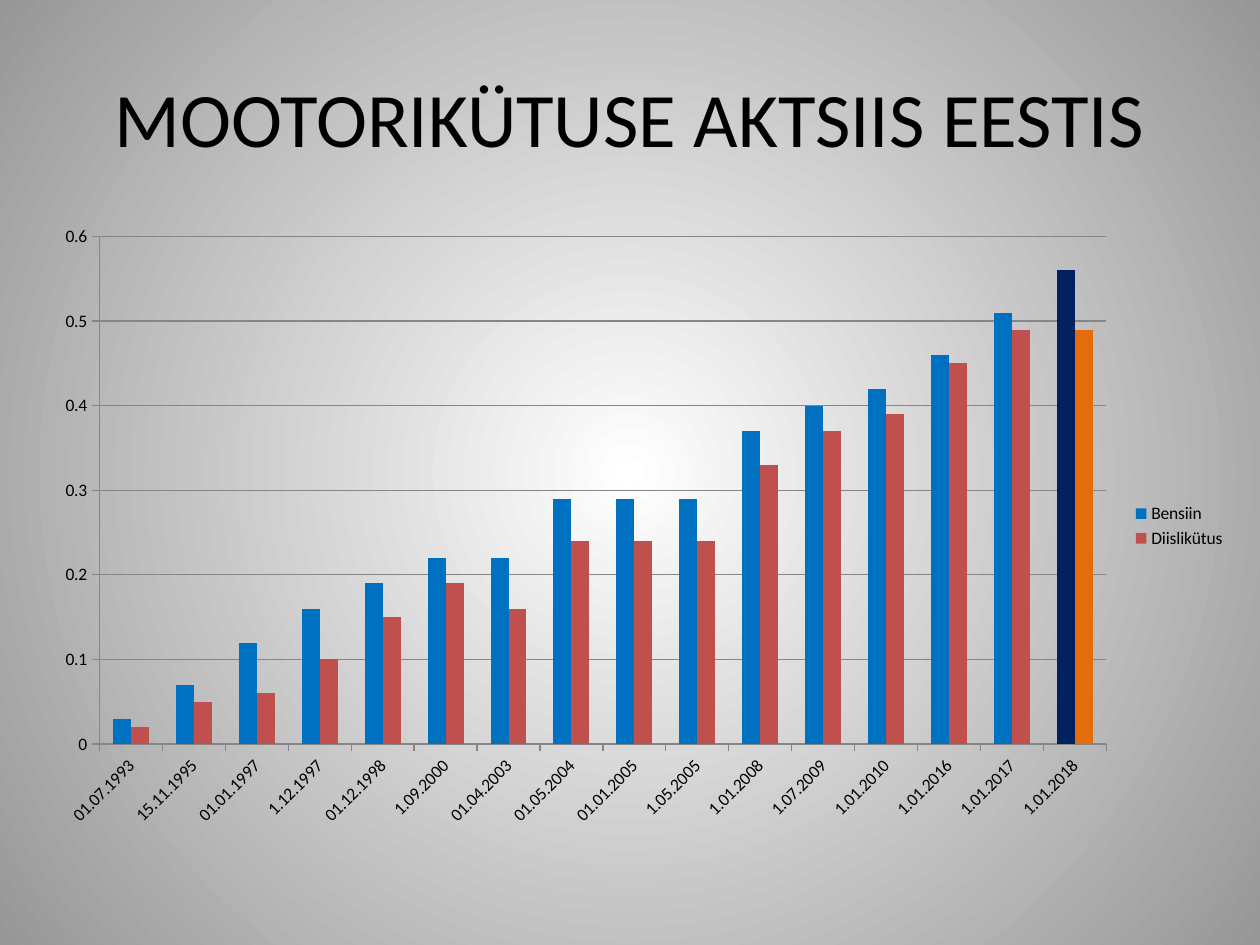
from lxml import etree
from pptx import Presentation
from pptx.chart.data import CategoryChartData
from pptx.dml.color import RGBColor
from pptx.enum.chart import XL_CHART_TYPE, XL_LEGEND_POSITION, XL_TICK_MARK
from pptx.enum.text import MSO_ANCHOR, PP_ALIGN
from pptx.oxml.ns import qn
from pptx.util import Inches, Pt

COLUMNS = XL_CHART_TYPE.COLUMN_CLUSTERED
RIGHT = XL_LEGEND_POSITION.RIGHT
OUTSIDE = XL_TICK_MARK.OUTSIDE
MIDDLE = MSO_ANCHOR.MIDDLE
CENTER = PP_ALIGN.CENTER
FONT = "Calibri"


def rgb(value):
    return RGBColor.from_string(value)


def write(tf, text, size=18, color="000000", align=CENTER, anchor=MIDDLE):
    tf.word_wrap = True
    tf.vertical_anchor = anchor
    p = tf.paragraphs[0]
    p.alignment = align
    r = p.add_run()
    r.text = text
    r.font.name, r.font.size = FONT, Pt(size)
    r.font.color.rgb = rgb(color)


prs = Presentation()
prs.slide_width, prs.slide_height = Inches(10), Inches(7.5)
W, H = prs.slide_width, prs.slide_height
slide = prs.slides.add_slide(prs.slide_layouts[5])

# Background: white centre fading to grey
fill = slide.background.fill
fill.gradient()
for stop, color in zip(fill.gradient_stops, ("FFFFFF", "979797")):
    stop.color.rgb = rgb(color)
grad = slide.background._cSld.find(".//" + qn("a:gradFill"))
for position, gs in zip(("0", "100000"), grad.iter(qn("a:gs"))):
    gs.set("pos", position)
grad.remove(grad.find(qn("a:lin")))
circle = etree.SubElement(grad, qn("a:path"), path="circle")
etree.SubElement(circle, qn("a:fillToRect"),
                 {side: "50000" for side in "ltrb"})

# Title
title = slide.shapes.title
title.left, title.top = int(W * 0.05), int(H * 0.04)
title.width, title.height = int(W * 0.9), Inches(1.25)
write(title.text_frame, "MOOTORIKÜTUSE AKTSIIS EESTIS", size=44)

# Chart data: name, values, colour, colour of the last column
dates = ["01.07.1993", "15.11.1995", "01.01.1997", "1.12.1997",
         "01.12.1998", "1.09.2000", "01.04.2003", "01.05.2004",
         "01.01.2005", "1.05.2005", "1.01.2008", "1.07.2009",
         "1.01.2010", "1.01.2016", "1.01.2017", "1.01.2018"]
fuels = [
    ("Bensiin", [0.03, 0.07, 0.12, 0.16, 0.19, 0.22, 0.22, 0.29,
                 0.29, 0.29, 0.37, 0.4, 0.42, 0.46, 0.51, 0.56],
     "0070C0", "002060"),
    ("Diislikütus", [0.02, 0.05, 0.06, 0.1, 0.15, 0.19, 0.16, 0.24,
                     0.24, 0.24, 0.33, 0.37, 0.39, 0.45, 0.49, 0.49],
     "C0504D", "E46C0A"),
]
data = CategoryChartData()
data.categories = dates
for name, values, *colors in fuels:
    data.add_series(name, values)

# Chart
chart = slide.shapes.add_chart(COLUMNS, int(W * 0.033), Inches(1.7),
                               int(W * 0.95), int(H * 0.66), data).chart
chart.has_title = False
chart.font.name, chart.font.size = FONT, Pt(10)
chart.font.color.rgb = rgb("000000")
chart.has_legend = True
chart.legend.position = RIGHT
chart.legend.include_in_layout = False

# Columns
plot = chart.plots[0]
plot.gap_width, plot.overlap = 150, 0
plot.vary_by_categories = False
for series, (name, values, color, last_color) in zip(plot.series, fuels):
    series.invert_if_negative = False
    last = series.points[len(dates) - 1]
    for part, part_color in ((series, color), (last, last_color)):
        part.format.fill.solid()
        part.format.fill.fore_color.rgb = rgb(part_color)

# Axes and gridlines
value_axis = chart.value_axis
value_axis.minimum_scale, value_axis.maximum_scale = 0, 0.6
value_axis.major_unit = 0.1
value_axis.has_major_gridlines = True
for axis in (chart.category_axis, value_axis):
    axis.major_tick_mark = OUTSIDE
for part in (chart.category_axis, value_axis, value_axis.major_gridlines):
    part.format.line.color.rgb = rgb("868686")
    part.format.line.width = Pt(0.75)

prs.save("out.pptx")
